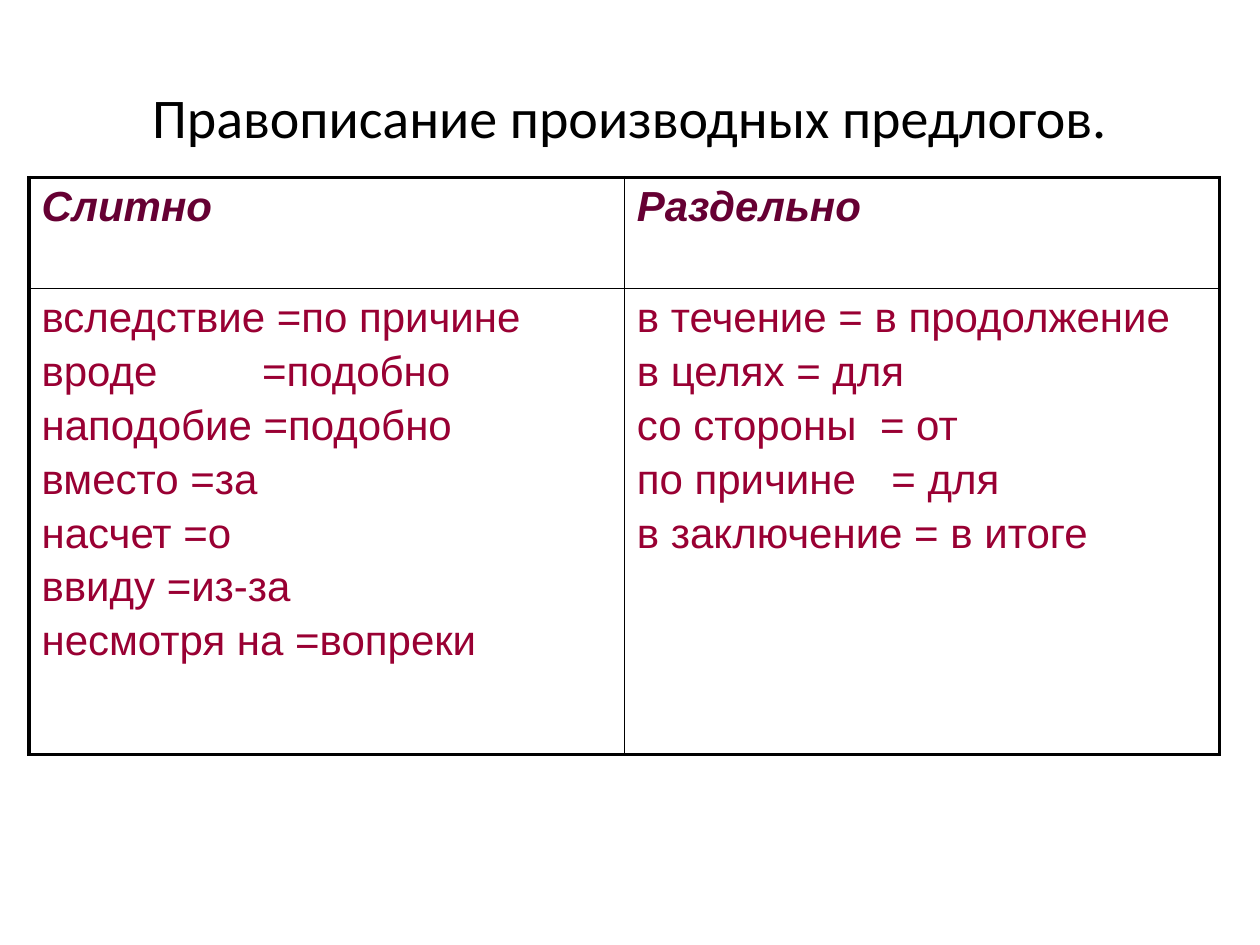
from lxml import etree
from pptx import Presentation
from pptx import util as u
from pptx.dml.color import RGBColor
from pptx.enum import text
from pptx.oxml import ns

BLACK = RGBColor(0x00, 0x00, 0x00)
PLUM = RGBColor(0x66, 0x00, 0x33)
CRIMSON = RGBColor(0x99, 0x00, 0x33)
OUTER, INNER = 2.25, 1

TITLE = "Правописание производных предлогов."
HEADERS = ["Слитно", "Раздельно"]
# Each line is its text and, where the "=" is set apart, the tab stop in inches.
JOINED = [
    ("вследствие =по причине", None),
    ("вроде\t=подобно", 1.75),
    ("наподобие =подобно", None),
    ("вместо =за", None),
    ("насчет =о", None),
    ("ввиду =из-за", None),
    ("несмотря на =вопреки", None),
]
SEPARATE = [
    ("в течение = в продолжение", None),
    ("в целях = для", None),
    ("со стороны\t= от", 1.93),
    ("по причине\t= для", 2.02),
    ("в заключение = в итоге", None),
]


def add_title(s, title):
    sp = s.shapes.title
    sp.left, sp.top, sp.width, sp.height = map(u.Inches, (0.5, 0.3, 9, 1.25))
    tf = sp.text_frame
    tf.text = title
    tf.vertical_anchor = text.MSO_ANCHOR.MIDDLE
    p = tf.paragraphs[0]
    p.alignment = text.PP_ALIGN.CENTER
    font = p.runs[0].font
    font.name, font.size = "Calibri", u.Pt(32)
    font.color.rgb = BLACK


def add_tab_stop(p, inches):
    tabs = etree.SubElement(p._p.get_or_add_pPr(), ns.qn("a:tabLst"))
    etree.SubElement(tabs, ns.qn("a:tab"), pos=str(u.Inches(inches)), algn="l")


def set_borders(cell, widths):
    """Draw black borders; widths maps the sides L, R, T, B to points."""
    tcPr = cell._tc.get_or_add_tcPr()
    for side, width in widths.items():
        ln = etree.SubElement(tcPr, ns.qn(f"a:ln{side}"), w=str(u.Pt(width)))
        fill = etree.SubElement(ln, ns.qn("a:solidFill"))
        etree.SubElement(fill, ns.qn("a:srgbClr"), val=str(BLACK))


def fill_cell(cell, lines, color, emphasis):
    tf = cell.text_frame
    for i, (line, stop) in enumerate(lines):
        p = tf.add_paragraph() if i else tf.paragraphs[0]
        p.text = line
        if i:
            p.space_before = u.Pt(4)
        if stop:
            add_tab_stop(p, stop)
        font = p.runs[0].font
        font.name, font.size = "Arial", u.Pt(24)
        font.bold = font.italic = emphasis
        font.color.rgb = color


def add_rules_table(s, columns, row_heights):
    n_rows, n_cols = len(row_heights), len(columns)
    frame = s.shapes.add_table(n_rows, n_cols, u.Inches(0.23), u.Inches(1.41),
                               u.Inches(9.45), u.Inches(sum(row_heights)))
    table = frame.table
    table.first_row = table.horz_banding = False
    for row, height in zip(table.rows, row_heights):
        row.height = u.Inches(height)
    for c, (header, lines) in enumerate(columns):
        fill_cell(table.cell(0, c), [(header, None)], PLUM, True)
        fill_cell(table.cell(1, c), lines, CRIMSON, False)
        for r in range(n_rows):
            cell = table.cell(r, c)
            set_borders(cell, {
                "L": OUTER if c == 0 else INNER,
                "R": OUTER if c == n_cols - 1 else INNER,
                "T": OUTER if r == 0 else INNER,
                "B": OUTER if r == n_rows - 1 else INNER,
            })
            cell.fill.background()


def main():
    prs = Presentation()
    prs.slide_width, prs.slide_height = u.Inches(10), u.Inches(7.5)
    s = prs.slides.add_slide(prs.slide_layouts[5])
    add_title(s, TITLE)
    add_rules_table(s, list(zip(HEADERS, [JOINED, SEPARATE])), [0.88, 3.7])
    prs.save("out.pptx")


if __name__ == "__main__":
    main()
